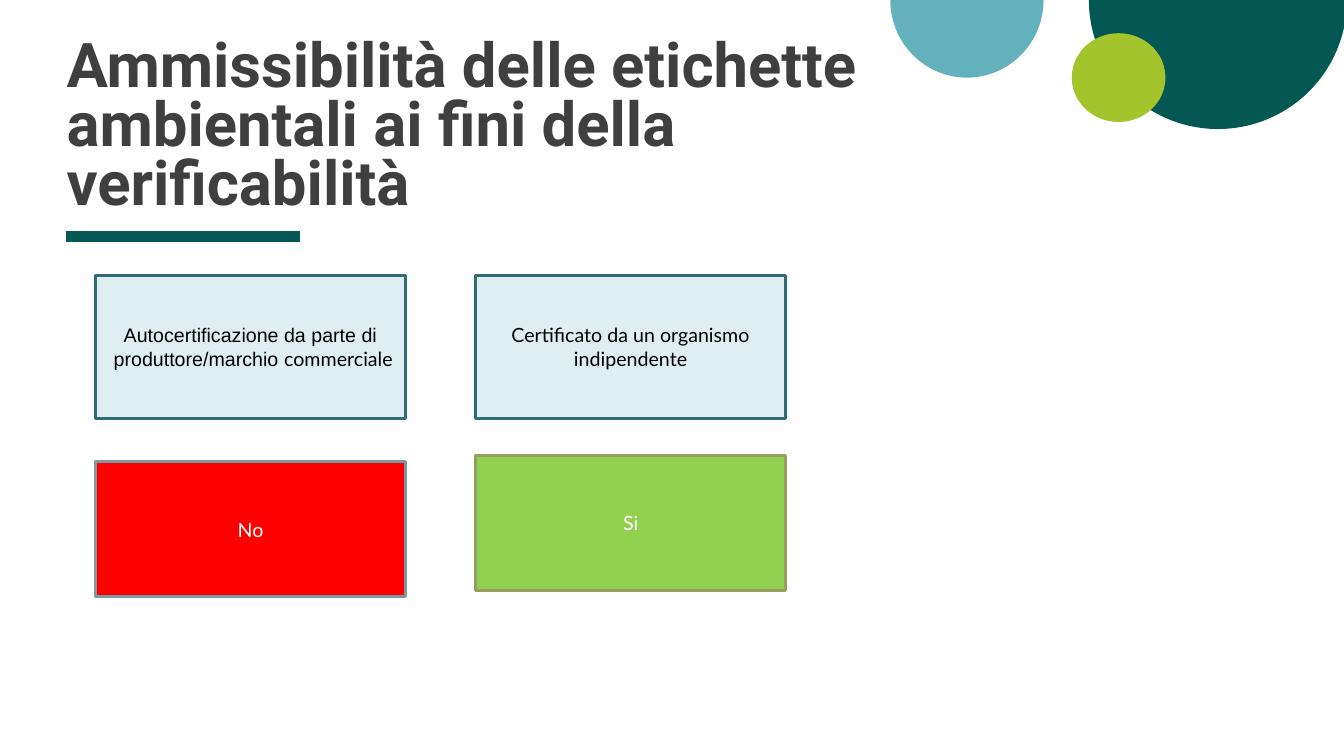
"""Build the slide on the admissibility of environmental labels."""
from dataclasses import dataclass

from lxml import etree
from pptx import Presentation
from pptx import util as u
from pptx.dml.color import RGBColor
from pptx.enum import shapes, text
from pptx.oxml import ns


@dataclass(frozen=True)
class Theme:
    """Hold the colours, fonts and sizes of the slide."""
    teal: str = "035854"
    aqua: str = "64B1BE"
    lime: str = "A3C42A"
    heading: str = "3F3F3F"
    pale: str = "CAE4E9"
    pale_line: str = "316C76"
    red: str = "FF0000"
    red_line: str = "7B9A9F"
    green: str = "92D050"
    green_line: str = "949F60"
    black: str = "000000"
    white: str = "FFFFFF"
    title_font: str = "Roboto"
    body_font: str = "Lato"
    label_font: str = "Arial"
    title_size: int = 44
    body_size: int = 14
    box_line: int = 2
    rule_line: int = 8
    pale_opacity: int = 62


THEME = Theme()
COLUMNS = (0.95, 4.72)
BOX_WIDTH = 3.07


def apply_format(target, values):
    """Set every attribute in a dict of format values."""
    for name, value in values.items():
        setattr(target, name, value)


def format_font(font, name, size, color, bold=False):
    """Give a font its face, size, weight and colour."""
    apply_format(font, {"name": name, "size": u.Pt(size), "bold": bold})
    font.color.rgb = RGBColor.from_string(color)


def set_opacity(shape, percent):
    """Make a solid fill partly transparent."""
    color = shape.fill._xPr.find(ns.qn("a:solidFill"))[0]
    etree.SubElement(color, ns.qn("a:alpha"), val=str(percent * 1000))


def add_filled(slide, kind, bounds, fill):
    """Add a flat preset shape without an outline."""
    shape = slide.shapes.add_shape(kind, *map(u.Inches, bounds))
    shape.shadow.inherit = False
    shape.fill.solid()
    shape.fill.fore_color.rgb = RGBColor.from_string(fill)
    shape.line.fill.background()
    return shape


def add_half_disc(slide, bounds, fill, end):
    """Add the lower half of a disc."""
    shape = add_filled(slide, shapes.MSO_SHAPE.PIE, bounds, fill)
    shape.adjustments[0] = 0
    shape.adjustments[1] = end


def add_rule(slide, left, right, top):
    """Add the thick rule below the title."""
    rule = slide.shapes.add_connector(
        shapes.MSO_CONNECTOR.STRAIGHT, *map(u.Inches, (left, top, right, top)))
    rule.line.color.rgb = RGBColor.from_string(THEME.teal)
    rule.line.width = u.Pt(THEME.rule_line)
    etree.SubElement(rule._element.spPr, ns.qn("a:effectLst"))


def add_title(slide, words):
    """Place and format the title."""
    title = slide.shapes.title
    bounds = dict(zip(("left", "top", "width", "height"),
                      map(u.Inches, (0.66, 0.42, 8.71, 1.74))))
    apply_format(title, bounds)
    frame = title.text_frame
    frame.text = words
    apply_format(frame, {
        "margin_left": 0, "margin_top": 0, "margin_right": 0, "margin_bottom": 0,
        "word_wrap": True, "auto_size": text.MSO_AUTO_SIZE.NONE,
        "vertical_anchor": text.MSO_ANCHOR.BOTTOM})
    paragraph = frame.paragraphs[0]
    apply_format(paragraph, {"alignment": text.PP_ALIGN.LEFT,
                             "line_spacing": 0.8, "space_before": u.Pt(0)})
    format_font(paragraph.runs[0].font, THEME.title_font, THEME.title_size,
                THEME.heading, True)


def add_box(slide, bounds, colors, lines, opacity=100):
    """Add an outlined box with centred lines of (words, font) runs."""
    fill, outline, ink = colors
    box = add_filled(slide, shapes.MSO_SHAPE.RECTANGLE, bounds, fill)
    if opacity < 100:
        set_opacity(box, opacity)
    box.line.color.rgb = RGBColor.from_string(outline)
    box.line.width = u.Pt(THEME.box_line)
    apply_format(box.text_frame, {"word_wrap": True,
                                  "vertical_anchor": text.MSO_ANCHOR.MIDDLE})
    paragraph = box.text_frame.paragraphs[0]
    paragraph.alignment = text.PP_ALIGN.CENTER
    for index, line in enumerate(lines):
        if index:
            paragraph.add_line_break()
        for words, font in line:
            run = paragraph.add_run()
            run.text = words
            format_font(run.font, font, THEME.body_size, ink)


def main():
    """Compose and save the slide."""
    presentation = Presentation()
    apply_format(presentation, {"slide_width": u.Inches(13.33),
                                "slide_height": u.Inches(7.5)})
    slide = presentation.slides.add_slide(presentation.slide_layouts[5])

    add_half_disc(slide, (10.8, -1.28, 2.56, 2.56), THEME.teal, 107.96)
    add_rule(slide, 0.65, 2.98, 2.35)
    add_half_disc(slide, (8.83, -0.77, 1.52, 1.54), THEME.aqua, 108.52)
    add_filled(slide, shapes.MSO_SHAPE.OVAL, (10.63, 0.33, 0.93, 0.88), THEME.lime)
    add_title(slide, "Ammissibilità delle etichette ambientali ai fini della verificabilità")

    criteria = (
        [[("Autocertificazione da parte di", THEME.label_font)],
         [(" produttore/marchio ", THEME.label_font), ("commerciale", THEME.body_font)]],
        [[("Certificato da un organismo indipendente", THEME.body_font)]],
    )
    for left, lines in zip(COLUMNS, criteria):
        add_box(slide, (left, 2.73, BOX_WIDTH, 1.42),
                (THEME.pale, THEME.pale_line, THEME.black), lines, THEME.pale_opacity)

    answers = (
        (4.58, THEME.red, THEME.red_line, "No"),
        (4.52, THEME.green, THEME.green_line, "Si"),
    )
    for left, (top, fill, outline, answer) in zip(COLUMNS, answers):
        add_box(slide, (left, top, BOX_WIDTH, 1.34), (fill, outline, THEME.white),
                [[(answer, THEME.body_font)]])

    presentation.save("out.pptx")


if __name__ == "__main__":
    main()
